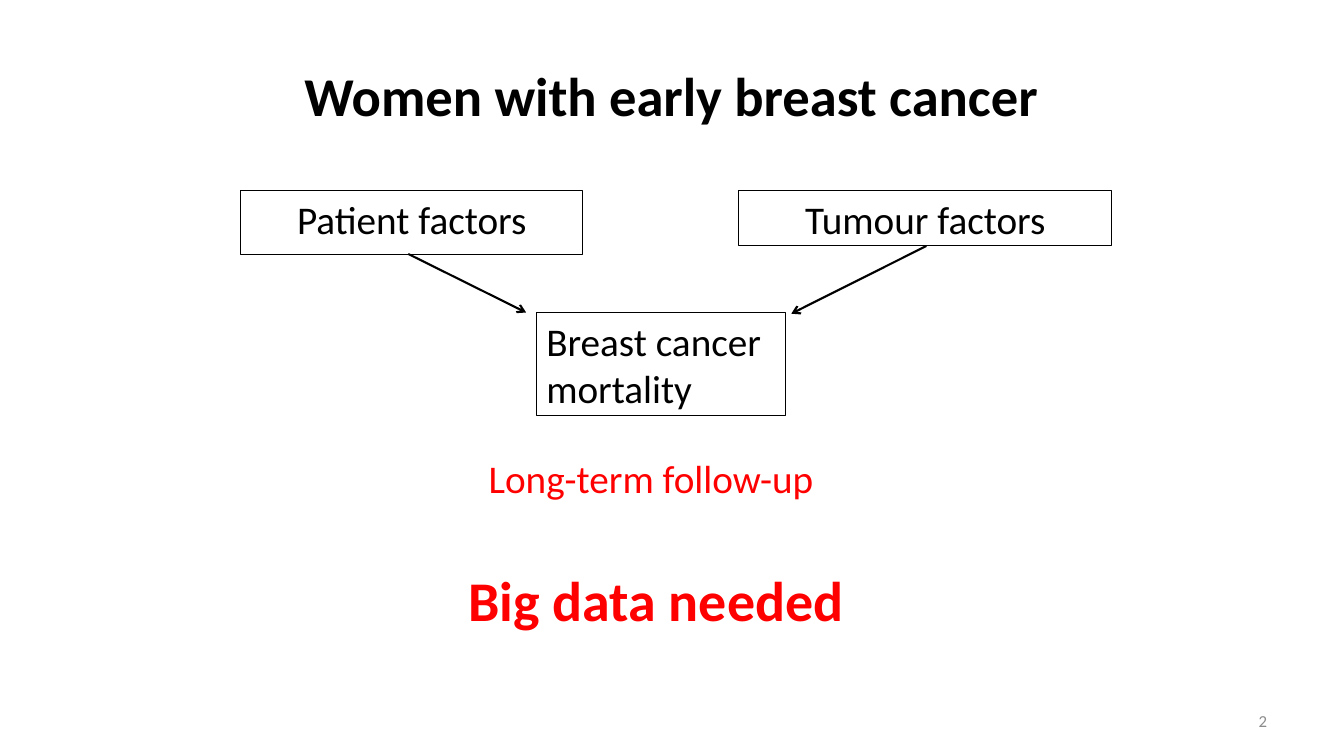
from lxml.etree import SubElement
from pptx import Presentation
from pptx.dml.color import RGBColor
from pptx.enum.shapes import MSO_CONNECTOR as CONN, MSO_SHAPE as SHAPE
from pptx.enum.text import MSO_ANCHOR as ANCHOR, MSO_AUTO_SIZE as FIT, PP_ALIGN as ALIGN
from pptx.oxml.ns import qn
from pptx.util import Pt

BLACK = RGBColor(0x00, 0x00, 0x00)
RED = RGBColor(0xFF, 0x00, 0x00)
GREY = RGBColor(0x8C, 0x8C, 0x8C)


class SlideBuilder:
    font = {"name": "Calibri", "size": Pt(28), "bold": False}

    def __init__(self, prs):
        self.slide = prs.slides.add_slide(prs.slide_layouts[1])
        for ph in list(self.slide.placeholders):
            if ph.placeholder_format.idx > 1:
                ph._element.getparent().remove(ph._element)

    def place(self, sp, box):
        for name, value in zip(("left", "top", "width", "height"), box):
            setattr(sp, name, Pt(value))

    def set_text(self, sp, text, color=BLACK, align=ALIGN.LEFT, anchor=ANCHOR.TOP, **font):
        tf = sp.text_frame
        frame = {"word_wrap": True, "auto_size": FIT.NONE, "vertical_anchor": anchor}
        for name, value in frame.items():
            setattr(tf, name, value)
        p = tf.paragraphs[0]
        p.alignment = align
        r = p.add_run()
        r.text = text
        for name, value in {**self.font, **font}.items():
            setattr(r.font, name, value)
        r.font.color.rgb = color
        return p

    def outline(self, sp):
        sp.fill.background()
        sp.line.color.rgb = BLACK
        sp.line.width = Pt(0.75)

    def title(self, text, box):
        sp = self.slide.shapes.title
        self.place(sp, box)
        self.set_text(sp, text, align=ALIGN.CENTER, anchor=ANCHOR.MIDDLE, size=Pt(39), bold=True)

    def body(self, text, box):
        sp = self.slide.placeholders[1]
        self.place(sp, box)
        self.outline(sp)
        pPr = self.set_text(sp, text)._p.get_or_add_pPr()
        pPr.set("marL", "0")
        pPr.set("indent", "0")
        SubElement(pPr, qn("a:buNone"))

    def factor(self, text, box):
        sp = self.slide.shapes.add_shape(SHAPE.RECTANGLE, *map(Pt, box))
        sp.shadow.inherit = False
        self.outline(sp)
        self.set_text(sp, text, align=ALIGN.CENTER)

    def label(self, text, box, **style):
        sp = self.slide.shapes.add_textbox(*map(Pt, box))
        self.set_text(sp, text, **style)

    def arrow(self, start, end):
        sp = self.slide.shapes.add_connector(CONN.STRAIGHT, *map(Pt, start + end))
        sp.line.color.rgb = BLACK
        sp.line.width = Pt(1.5)
        spPr = sp._element.spPr
        SubElement(spPr.find(qn("a:ln")), qn("a:tailEnd"), type="arrow")
        SubElement(spPr, qn("a:effectLst"))


def main():
    prs = Presentation()
    prs.slide_width, prs.slide_height = Pt(960), Pt(540)
    s = SlideBuilder(prs)
    s.title("Women with early breast cancer", (173.5, 9.4, 612, 116))
    s.body("Breast cancer mortality", (383, 223.2, 177.8, 73.4))
    s.factor("Patient factors", (172.1, 136.1, 244.1, 45.4))
    s.factor("Tumour factors", (527.8, 136.1, 266.4, 39.6))
    s.arrow((291.6, 181.4), (375.8, 223.2))
    s.arrow((661.7, 175.7), (565.2, 224.1))
    s.label("Long-term follow-up", (342, 321.1, 257, 41), color=RED)
    s.label("Big data needed", (327.6, 400.3, 304.6, 55.4), color=RED, size=Pt(40), bold=True)
    s.label("2", (688.3, 500.4, 223.9, 28.8), color=GREY, align=ALIGN.RIGHT,
            anchor=ANCHOR.MIDDLE, size=Pt(12))
    prs.save("out.pptx")


if __name__ == "__main__":
    main()
